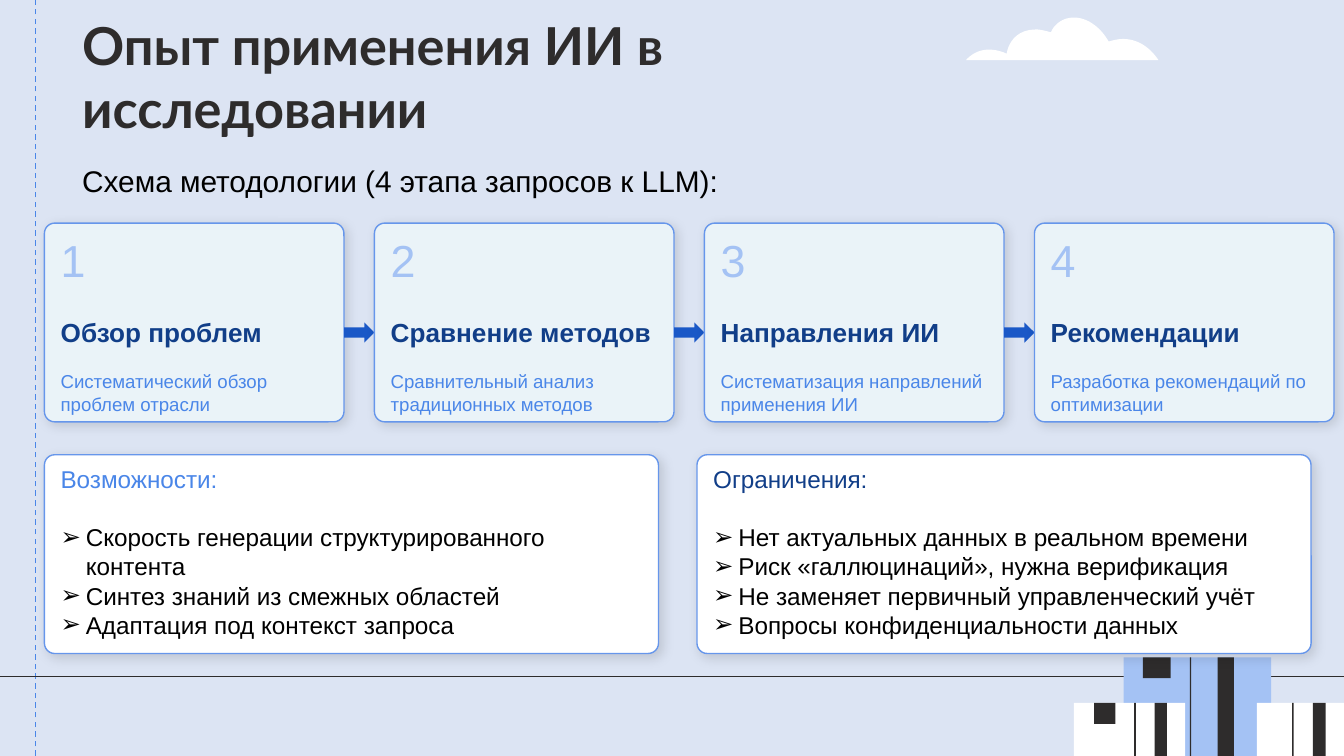
from lxml.etree import SubElement
from pptx import Presentation
from pptx.dml.color import RGBColor
from pptx.enum.dml import MSO_LINE
from pptx.enum.shapes import MSO_CONNECTOR, MSO_SHAPE
from pptx.enum.text import MSO_ANCHOR, PP_ALIGN
from pptx.oxml.ns import qn
from pptx.util import Pt

SKY = RGBColor(0xDC, 0xE4, 0xF3)
WHITE = RGBColor(0xFF, 0xFF, 0xFF)
BLACK = RGBColor(0x00, 0x00, 0x00)
DARK = RGBColor(0x2E, 0x2C, 0x2C)
LIGHT_BLUE = RGBColor(0xA4, 0xC2, 0xF4)
BLUE = RGBColor(0x4A, 0x86, 0xE8)
BORDER = RGBColor(0x66, 0x96, 0xEB)
NAVY = RGBColor(0x11, 0x3E, 0x88)
ARROW = RGBColor(0x1A, 0x58, 0xC7)
PALE = RGBColor(0xEA, 0xF3, 0xF8)

TITLE = {"size": Pt(28), "name": "Lato", "bold": True}
SUBTITLE = {"size": Pt(16), "name": "Arial", "bold": False}
NUMBER = {"size": Pt(24), "name": "Arial", "bold": False}
HEADING = {"size": Pt(14), "name": "Arial", "bold": True}
DETAIL = {"size": Pt(10), "name": "Arial", "bold": False}
LIST = {"size": Pt(13), "name": "Arial", "bold": False}


def add_box(kind, left, top, width, height, fill, framed=False):
    shape = slide.shapes.add_shape(kind, Pt(left), Pt(top), Pt(width), Pt(height))
    shape.shadow.inherit = False
    shape.fill.solid()
    shape.fill.fore_color.rgb = fill
    if not framed:
        shape.line.fill.background()
        return shape
    shape.adjustments[0] = 0.052
    shape.line.color.rgb = BORDER
    shape.line.width = Pt(0.75)
    effects = shape._element.spPr.find(qn("a:effectLst"))
    shadow = SubElement(effects, qn("a:outerShdw"), blurRad=str(Pt(6)), dist=str(Pt(2)),
                        dir="2700000", algn="tl", rotWithShape="0")
    color = SubElement(shadow, qn("a:srgbClr"), val="000000")
    SubElement(color, qn("a:alpha"), val="12000")
    return shape


def write_lines(frame, lines, top_inset):
    insets = {"margin_left": Pt(7.2), "margin_right": Pt(7.2),
              "margin_top": Pt(top_inset), "margin_bottom": Pt(0),
              "word_wrap": True, "vertical_anchor": MSO_ANCHOR.TOP}
    for name, value in insets.items():
        setattr(frame, name, value)
    for index, (text, style, color, before, bullet) in enumerate(lines):
        paragraph = frame.paragraphs[0] if index == 0 else frame.add_paragraph()
        if bullet:
            properties = paragraph._p.get_or_add_pPr()
            properties.set("marL", str(Pt(13.5)))
            properties.set("indent", str(Pt(-13.5)))
            bullet_color = SubElement(properties, qn("a:buClr"))
            SubElement(bullet_color, qn("a:srgbClr"), val=str(BLACK))
            SubElement(properties, qn("a:buFont"), typeface="Arial")
            SubElement(properties, qn("a:buChar"), char="➢")
        paragraph.alignment = PP_ALIGN.LEFT
        paragraph.space_before = Pt(before)
        for part_index, part in enumerate(text.split("\n")):
            if part_index:
                paragraph.add_line_break()
            run = paragraph.add_run()
            run.text = part
            for name, value in style.items():
                setattr(run.font, name, value)
            run.font.color.rgb = color


presentation = Presentation()
presentation.slide_width = Pt(720)
presentation.slide_height = Pt(405)
slide = presentation.slides.add_slide(presentation.slide_layouts[6])
slide.background.fill.solid()
slide.background.fill.fore_color.rgb = SKY

guides = [
    (18.9, 405, 18.9, 0, BLUE, MSO_LINE.DASH),
    (0, 362.3, 720, 362.3, DARK, MSO_LINE.SOLID),
]
for start_x, start_y, end_x, end_y, color, dash in guides:
    guide = slide.shapes.add_connector(
        MSO_CONNECTOR.STRAIGHT, Pt(start_x), Pt(start_y), Pt(end_x), Pt(end_y))
    guide.line.color.rgb = color
    guide.line.width = Pt(0.75)
    guide.line.dash_style = dash
    SubElement(guide._element.spPr, qn("a:effectLst"))

cloud_curves = [
    ((575.3, 9.4), (570.2, 9.4), (565.2, 12.2), (563, 17.3)),
    ((563, 17.3), (560.2, 16.6), (557.3, 15.8), (555.1, 15.8)),
    ((555.1, 15.8), (540.7, 15.8), (539.3, 28.8), (539.3, 28.8)),
    ((539.3, 28.8), (539.3, 28.8), (535, 26.6), (529.9, 26.6)),
    ((529.9, 26.6), (525.6, 26.6), (521.3, 28.1), (517.5, 32.2)),
    ((620.6, 32.2), (615.6, 24.5), (608.4, 20.9), (601.9, 20.9)),
    ((601.9, 20.9), (599, 20.9), (596.2, 21.6), (594, 22.3)),
    ((594, 22.3), (589, 13.7), (581.8, 9.4), (575.3, 9.4)),
]
cloud_points = []
for curve in cloud_curves:
    for step in range(13):
        t = step / 12
        weights = ((1 - t) ** 3, 3 * t * (1 - t) ** 2, 3 * t ** 2 * (1 - t), t ** 3)
        cloud_points.append(tuple(
            Pt(sum(weight * point[axis] for weight, point in zip(weights, curve)))
            for axis in (0, 1)))
builder = slide.shapes.build_freeform(*cloud_points[0])
builder.add_line_segments(cloud_points[1:], close=True)
cloud = builder.convert_to_shape()
cloud.shadow.inherit = False
cloud.fill.solid()
cloud.fill.fore_color.rgb = WHITE
cloud.line.fill.background()

TOWER_TOP, HOUSE_TOP, GROUND = 352.2, 376.6, 405
building_parts = [
    (602, TOWER_TOP, 79, GROUND, LIGHT_BLUE),
    (652.3, TOWER_TOP, 8.8, GROUND, DARK),
    (612.2, TOWER_TOP, 15, 363.3, DARK),
    (575.3, HOUSE_TOP, 59.7, GROUND, WHITE),
    (618.6, HOUSE_TOP, 6.5, GROUND, DARK),
    (586.2, HOUSE_TOP, 11.3, 387.8, DARK),
    (637.4, TOWER_TOP, 0.75, GROUND, DARK),
    (607.6, HOUSE_TOP, 0.9, GROUND, DARK),
    (673.4, HOUSE_TOP, 46.6, GROUND, WHITE),
    (703.4, HOUSE_TOP, 6.8, GROUND, DARK),
    (692.2, HOUSE_TOP, 0.9, GROUND, DARK),
]
for left, top, width, bottom, color in building_parts:
    add_box(MSO_SHAPE.RECTANGLE, left, top, width, bottom - top, color)

headers = [
    (0, 462, 72, "Опыт применения ИИ в \nисследовании", TITLE, DARK),
    (80, 551, 31, "Схема методологии (4 этапа запросов к LLM):", SUBTITLE, BLACK),
]
for top, width, height, text, style, color in headers:
    header = slide.shapes.add_textbox(Pt(37), Pt(top), Pt(width), Pt(height))
    write_lines(header.text_frame, [(text, style, color, 0, False)], 7.2)

CARD_LEFT, CARD_TOP, CARD_WIDTH, CARD_HEIGHT, CARD_STEP = 23.8, 119.5, 160.5, 106.5, 176.8
BOX_INSET = 3.6
stages = [
    ("Обзор проблем", "Систематический обзор проблем отрасли"),
    ("Сравнение методов", "Сравнительный анализ традиционных методов"),
    ("Направления ИИ", "Систематизация направлений применения ИИ"),
    ("Рекомендации", "Разработка рекомендаций по оптимизации"),
]
for index, (heading, detail) in enumerate(stages):
    left = CARD_LEFT + index * CARD_STEP
    card = add_box(MSO_SHAPE.ROUNDED_RECTANGLE, left, CARD_TOP, CARD_WIDTH, CARD_HEIGHT,
                   PALE, framed=True)
    write_lines(card.text_frame, [
        (str(index + 1), NUMBER, LIGHT_BLUE, 0, False),
        (heading, HEADING, NAVY, 16, False),
        (detail, DETAIL, BLUE, 12, False),
    ], BOX_INSET)
    if index < len(stages) - 1:
        add_box(MSO_SHAPE.RIGHT_ARROW, left + CARD_WIDTH, CARD_TOP + CARD_HEIGHT / 2,
                CARD_STEP - CARD_WIDTH, 10.8, ARROW)

panels = [
    (23.8, "Возможности:", BLUE, [
        "Скорость генерации структурированного контента",
        "Синтез знаний из смежных областей",
        "Адаптация под контекст запроса",
    ]),
    (373.4, "Ограничения:", NAVY, [
        "Нет актуальных данных в реальном времени",
        "Риск «галлюцинаций», нужна верификация",
        "Не заменяет первичный управленческий учёт",
        "Вопросы конфиденциальности данных",
    ]),
]
for left, heading, color, items in panels:
    panel = add_box(MSO_SHAPE.ROUNDED_RECTANGLE, left, 243.6, 329, CARD_HEIGHT, WHITE, framed=True)
    lines = [(heading, LIST, color, 0, False)]
    for index, item in enumerate(items):
        lines.append((item, LIST, BLACK, 15.5 if index == 0 else 0, True))
    write_lines(panel.text_frame, lines, BOX_INSET)

presentation.save("out.pptx")
